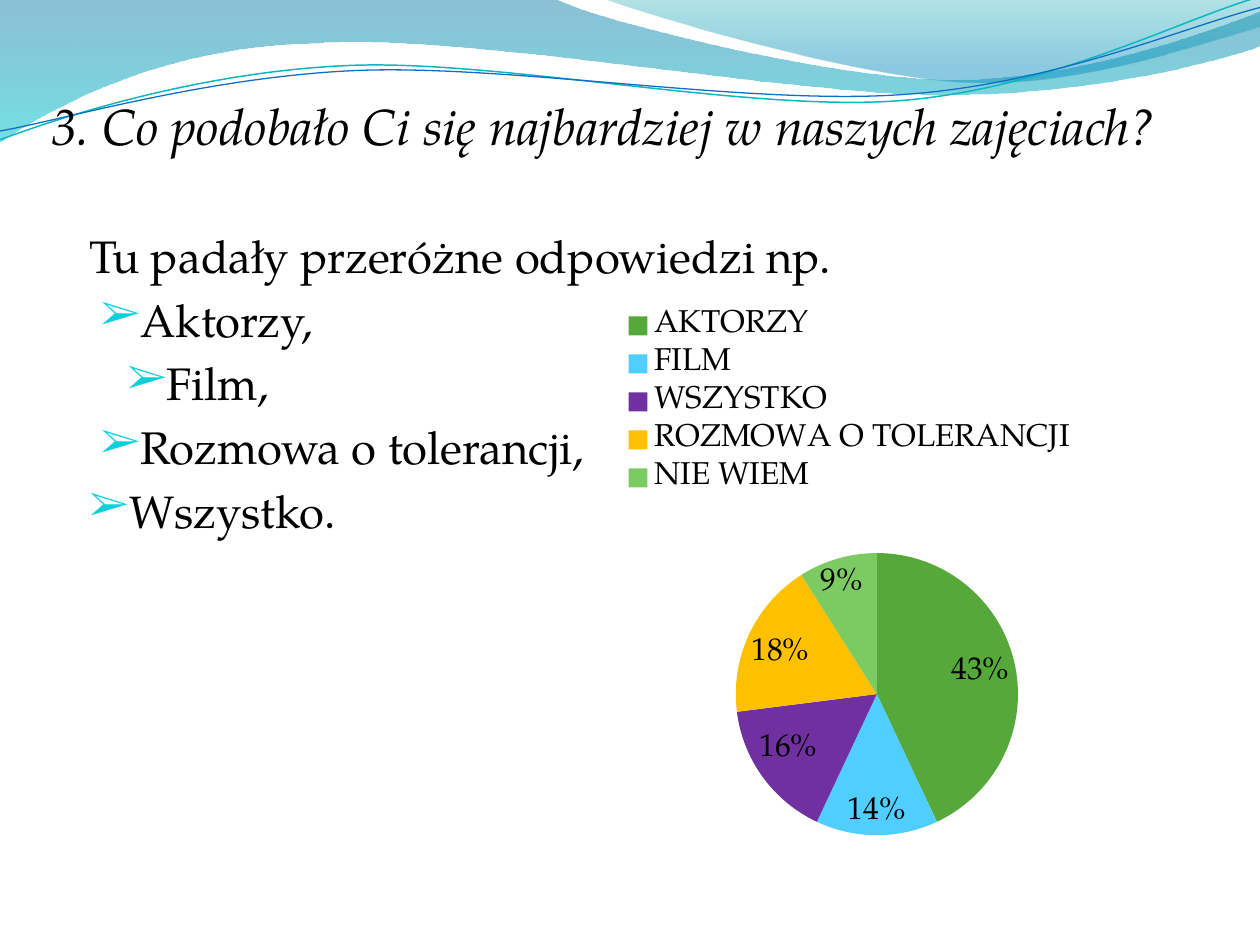
from dataclasses import dataclass
from math import cos, radians, sin

from lxml import etree
from pptx import Presentation
from pptx.chart.data import CategoryChartData
from pptx.dml.color import RGBColor
from pptx.enum.chart import XL_CHART_TYPE, XL_LABEL_POSITION, XL_LEGEND_POSITION
from pptx.oxml.ns import qn
from pptx.util import Inches, Pt

PIE = XL_CHART_TYPE.PIE
LABEL_BEST_FIT = XL_LABEL_POSITION.BEST_FIT
LEGEND_TOP = XL_LEGEND_POSITION.TOP
CHART_WIDTH, CHART_HEIGHT = 7.07, 4.73

Point = tuple[float, float]


@dataclass(frozen=True)
class Theme:
    font: str = "TeX Gyre Pagella"
    ink: str = "000000"
    bullet: str = "0BD0D9"
    title_size: float = 29
    body_size: float = 26
    chart_size: float = 18
    blue: str = "0074A1"
    cyan: str = "00C6CF"
    teal: str = "00A1A9"
    sky: str = "008BBF"
    teal_line: str = "0AB8BF"
    blue_line: str = "0F6FC6"


THEME = Theme()


@dataclass(frozen=True)
class Stop:
    position: float
    color: str
    opacity: int


@dataclass(frozen=True)
class Wave:
    """Segments hold one point (straight) or three points (Bézier curve)."""
    start: Point
    segments: list[tuple[Point, ...]]
    stops: tuple[Stop, ...] = ()
    line_color: str = ""
    line_width: float = 0
    center: Point = (0, 0)
    rotation: float = 0


@dataclass(frozen=True)
class Line:
    text: str
    margin: float = 0.3
    indent: float = 0
    size: float = THEME.body_size
    space_before: float = 5.2
    italic: bool = False
    bullet: bool = False


@dataclass(frozen=True)
class Answer:
    label: str
    percent: int
    color: str


WAVES = [
    Wave((0, 0), [
        ((4.4, -0.01),),
        ((4.76, 0.17), (6.64, 0.63), (7.58, 0.63)),
        ((8.53, 0.63), (9.58, 0.26), (10, 0.09)),
        ((10.01, 0.36),),
        ((9.83, 0.44), (8.7, 0.76), (7.46, 0.75)),
        ((6.22, 0.75), (3.82, 0.28), (2.57, 0.34)),
        ((1.29, 0.36), (0.46, 0.83), (-0.01, 1.13)),
        ((0, 0),),
    ], stops=(Stop(0, THEME.blue, 45), Stop(1, THEME.cyan, 55))),
    Wave((4.79, -0.01), [
        ((5.09, 0.11), (6.82, 0.62), (7.69, 0.65)),
        ((8.56, 0.69), (9.61, 0.32), (10, 0.21)),
        ((10, 0),),
        ((4.79, -0.01),),
    ], stops=(Stop(0, THEME.teal, 30), Stop(0.8, THEME.sky, 45))),
    Wave((0, 1.11), [
        ((0.48, 0.93), (1.58, 0.57), (2.77, 0.52)),
        ((3.95, 0.47), (5.93, 0.89), (7.13, 0.8)),
        ((8.33, 0.71), (9.38, 0.15), (9.98, -0.02)),
    ], line_color=THEME.teal_line, line_width=0.85, center=(4.99, 0.57), rotation=-2.7),
    Wave((0, 1.04), [
        ((0.47, 0.96), (1.64, 0.61), (2.83, 0.56)),
        ((4.03, 0.51), (5.97, 0.84), (7.17, 0.75)),
        ((8.36, 0.67), (9.41, 0.21), (10, 0.06)),
    ], line_color=THEME.blue_line, line_width=0.75, center=(5, 0.59), rotation=-2.7),
]

LINES = [
    Line("3. Co podobało Ci się najbardziej w naszych zajęciach?",
         indent=-0.3, size=THEME.title_size, space_before=5.8, italic=True),
    Line("Tu padały przeróżne odpowiedzi np.", space_before=41.6),
    Line("Aktorzy,", indent=0.09, bullet=True),
    Line("Film,", indent=0.3, bullet=True),
    Line("Rozmowa o tolerancji,", indent=0.09, bullet=True),
    Line("Wszystko.", bullet=True),
]

ANSWERS = [
    Answer("AKTORZY", 43, "55A839"),
    Answer("FILM", 14, "4FCEFF"),
    Answer("WSZYSTKO", 16, "7030A0"),
    Answer("ROZMOWA O TOLERANCJI", 18, "FFC000"),
    Answer("NIE WIEM", 9, "7CCA62"),
]


def rgb(color: str) -> RGBColor:
    return RGBColor.from_string(color)


def unrotated(point: Point, wave: Wave) -> tuple[int, int]:
    """Turn a point back, so that the shape's rotation brings it into place."""
    angle = radians(-wave.rotation)
    dx, dy = point[0] - wave.center[0], point[1] - wave.center[1]
    return (Inches(wave.center[0] + dx * cos(angle) - dy * sin(angle)),
            Inches(wave.center[1] + dx * sin(angle) + dy * cos(angle)))


def draw_wave(slide, wave: Wave) -> None:
    segments = [[unrotated(p, wave) for p in segment] for segment in wave.segments]
    builder = slide.shapes.build_freeform(*unrotated(wave.start, wave))
    builder.add_line_segments([s[-1] for s in segments], close=bool(wave.stops))
    shape = builder.convert_to_shape()
    shape.shadow.inherit = False
    bend_segments(shape, segments)
    shape.rotation = wave.rotation
    if wave.stops:
        shape.line.fill.background()
        shape.fill.gradient()
        shape.fill.gradient_angle = 270
        for target, stop in zip(shape.fill.gradient_stops, wave.stops):
            target.position = stop.position
            target.color.rgb = rgb(stop.color)
        for color, stop in zip(shape._element.spPr.iter(qn("a:srgbClr")), wave.stops):
            etree.SubElement(color, qn("a:alpha"), val=str(stop.opacity * 1000))
    else:
        shape.fill.background()
        shape.line.color.rgb = rgb(wave.line_color)
        shape.line.width = Pt(wave.line_width)


def bend_segments(shape, segments: list[list[tuple[int, int]]]) -> None:
    """Put Bézier curves in place of the straight segments that have controls."""
    straights = list(shape._element.iter(qn("a:lnTo")))
    for straight, points in zip(straights, segments):
        if len(points) == 3:
            curve = etree.Element(qn("a:cubicBezTo"))
            for x, y in points:
                etree.SubElement(curve, qn("a:pt"), x=str(x - shape.left),
                                 y=str(y - shape.top))
            straight.getparent().replace(straight, curve)


def write_line(paragraph, line: Line) -> None:
    properties = paragraph._p.get_or_add_pPr()
    properties.set("marL", str(Inches(line.margin)))
    properties.set("indent", str(Inches(line.indent)))
    if line.bullet:
        color = etree.SubElement(properties, qn("a:buClr"))
        etree.SubElement(color, qn("a:srgbClr"), val=THEME.bullet)
        etree.SubElement(properties, qn("a:buSzPct"), val="95000")
        etree.SubElement(properties, qn("a:buFont"), typeface=THEME.font)
        etree.SubElement(properties, qn("a:buChar"), char="➢")
    paragraph.text = line.text
    paragraph.space_before = Pt(line.space_before)
    set_font(paragraph.font, line.size)
    paragraph.font.italic = line.italic


def set_font(font, size: float) -> None:
    font.name, font.size = THEME.font, Pt(size)
    font.color.rgb = rgb(THEME.ink)


def manual_layout(left: float, top: float, width: float, height: float,
                  inner: bool = False):
    """Place a chart part by inches from the chart's corner."""
    layout = etree.Element(qn("c:layout"))
    manual = etree.SubElement(layout, qn("c:manualLayout"))
    values = {"layoutTarget": "inner"} if inner else {}
    values |= {"xMode": "edge", "yMode": "edge",
               "x": left / CHART_WIDTH, "y": top / CHART_HEIGHT,
               "w": width / CHART_WIDTH, "h": height / CHART_HEIGHT}
    for name, value in values.items():
        etree.SubElement(manual, qn(f"c:{name}"), val=str(value))
    return layout


def draw_pie(slide, answers: list[Answer]) -> None:
    data = CategoryChartData()
    data.categories = [answer.label for answer in answers]
    data.add_series("Series 1", [answer.percent for answer in answers])
    chart = slide.shapes.add_chart(PIE, Inches(3.2), Inches(2.34), Inches(CHART_WIDTH),
                                   Inches(CHART_HEIGHT), data).chart
    set_font(chart.font, THEME.chart_size)
    chart.has_title = False
    chart.has_legend = True
    chart.legend.position = LEGEND_TOP
    chart.legend.include_in_layout = False
    plot = chart.plots[0]
    plot.vary_by_categories = True
    for index, answer in enumerate(answers):
        fill = plot.series[0].points[index].format.fill
        fill.solid()
        fill.fore_color.rgb = rgb(answer.color)
    plot.has_data_labels = True
    labels = plot.data_labels
    labels.show_value, labels.show_percentage = False, True
    labels.number_format, labels.number_format_is_linked = "0%", False
    labels.position = LABEL_BEST_FIT
    set_font(labels.font, THEME.chart_size)

    plot_area = chart._chartSpace.chart.plotArea
    legend = chart.legend._element
    for part in (plot_area, legend):
        for layout in part.findall(qn("c:layout")):
            part.remove(layout)
    plot_area.insert(0, manual_layout(2.64, 2.05, 2.24, 2.24, inner=True))
    legend.find(qn("c:legendPos")).addnext(manual_layout(1.7, 0.07, 3.68, 1.56))


def main() -> None:
    deck = Presentation()
    deck.slide_width, deck.slide_height = Inches(10), Inches(7.5)
    slide = deck.slides.add_slide(deck.slide_layouts[6])
    for wave in WAVES:
        draw_wave(slide, wave)
    body = slide.shapes.add_textbox(Inches(0.31), Inches(0.7), Inches(9.45), Inches(6.02))
    frame = body.text_frame
    frame.word_wrap = True
    for index, line in enumerate(LINES):
        write_line(frame.add_paragraph() if index else frame.paragraphs[0], line)
    draw_pie(slide, ANSWERS)
    deck.save("out.pptx")


if __name__ == "__main__":
    main()
